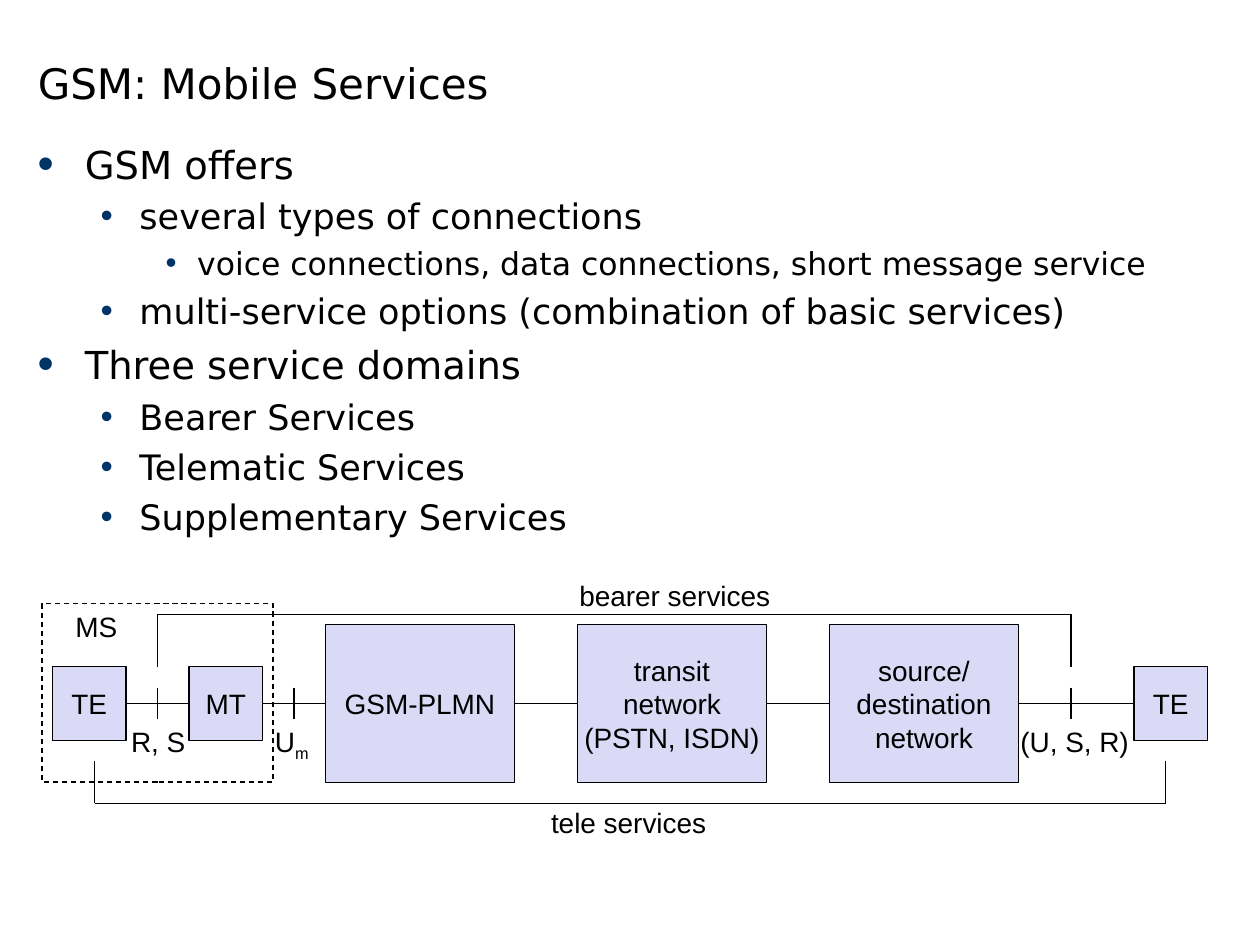
"""Build the slide on GSM mobile services."""
import dataclasses
import typing

import lxml.etree
import pptx
import pptx.dml.color
import pptx.enum.dml
import pptx.enum.shapes
import pptx.enum.text
import pptx.oxml.ns
import pptx.util

Align = pptx.enum.text.PP_ALIGN
Anchor = pptx.enum.text.MSO_ANCHOR
Fit = pptx.enum.text.MSO_AUTO_SIZE
Link = pptx.enum.shapes.MSO_CONNECTOR.STRAIGHT
Rect = pptx.enum.shapes.MSO_SHAPE.RECTANGLE
qn = pptx.oxml.ns.qn
Point = tuple[int, int]


@dataclasses.dataclass(frozen=True)
class Theme:
    ink: str = "000000"
    fill: str = "DADAF6"
    mark: str = "003366"
    head: str = "DejaVu Sans"
    label: str = "Arial"
    title: int = 24
    small: int = 16
    line: float = 0.75
    gap: float = 0.23


@dataclasses.dataclass(frozen=True)
class Level:
    size: int
    left: int
    hang: int
    mark: int


@dataclasses.dataclass(frozen=True)
class Node:
    text: str
    x: int
    y: int
    w: int
    h: int


@dataclasses.dataclass(frozen=True)
class Label:
    text: str
    x: int
    y: int
    w: int
    sub: str = ""


@dataclasses.dataclass(frozen=True)
class Bracket:
    left: int
    right: int
    bar: int
    tip: int


THEME = Theme()
SCALE = 7620
MID = 670
LEVELS = (Level(22, 45, 45, 120), Level(20, 97, 37, 100), Level(18, 152, 30, 100))
POINTS = (
    (0, "GSM offers"),
    (1, "several types of connections"),
    (2, "voice connections, data connections, short message service"),
    (1, "multi-service options (combination of basic services)"),
    (0, "Three service domains"),
    (1, "Bearer Services"),
    (1, "Telematic Services"),
    (1, "Supplementary Services"),
)
NODES = (
    Node("TE", 50, 635, 70, 70),
    Node("MT", 180, 635, 70, 70),
    Node("GSM-PLMN", 310, 595, 180, 150),
    Node("transit\nnetwork\n(PSTN, ISDN)", 550, 595, 180, 150),
    Node("source/\ndestination\nnetwork", 790, 595, 180, 150),
    Node("TE", 1080, 635, 70, 70),
)
LABELS = (
    Label("bearer services", 540, 545, 206),
    Label("tele services", 513, 761, 173),
    Label("R, S", 113, 684, 76),
    Label("(U, S, R)", 960, 684, 128),
    Label("U", 250, 684, 59, "m"),
    Label("MS", 60, 575, 64),
)
BRACKETS = (Bracket(90, 1110, 765, 725), Bracket(150, 1020, 585, 635))
TICKS = (150, 280, 1020)


def px(*vals: int) -> list[int]:
    """Turn px into EMU."""
    return [val * SCALE for val in vals]


def rgb(code: str) -> pptx.dml.color.RGBColor:
    """Read a hex colour."""
    return pptx.dml.color.RGBColor.from_string(code)


def write(para: typing.Any, text: str, *, size: float = THEME.small,
          font: str = THEME.label, align: Align = Align.LEFT, base: int = 0) -> None:
    """Add a formatted run to a paragraph."""
    para.alignment = align
    run = para.add_run()
    run.text = text
    run.font.size = pptx.util.Pt(size)
    run.font.name = font
    run.font.color.rgb = rgb(THEME.ink)
    if base:
        run.font._element.set("baseline", str(base * 1000))


def bullet(para: typing.Any, level: Level) -> None:
    """Give a paragraph its indent and bullet."""
    props = para._p.get_or_add_pPr()
    props.set("marL", str(level.left * SCALE))
    props.set("indent", str(-level.hang * SCALE))
    tint = lxml.etree.SubElement(props, qn("a:buClr"))
    lxml.etree.SubElement(tint, qn("a:srgbClr"), val=THEME.mark)
    lxml.etree.SubElement(props, qn("a:buSzPct"), val=str(level.mark * 1000))
    lxml.etree.SubElement(props, qn("a:buFont"), typeface=THEME.label)
    lxml.etree.SubElement(props, qn("a:buChar"), char="•")


def stroke(line: typing.Any) -> None:
    """Set the colour and width of a line."""
    line.color.rgb = rgb(THEME.ink)
    line.width = pptx.util.Pt(THEME.line)


def rule(shapes: typing.Any, start: Point, end: Point) -> typing.Any:
    """Draw a straight line."""
    wire = shapes.add_connector(Link, *px(*start, *end))
    stroke(wire.line)
    lxml.etree.SubElement(wire._element.spPr, qn("a:effectLst"))
    return wire


def box(shapes: typing.Any, node: Node, dashed: bool = False) -> typing.Any:
    """Draw a filled box with centred text, or a dashed frame."""
    shape = shapes.add_shape(Rect, *px(node.x, node.y, node.w, node.h))
    shape.shadow.inherit = False
    stroke(shape.line)
    if dashed:
        shape.fill.background()
        shape.line.dash_style = pptx.enum.dml.MSO_LINE.DASH
        return shape
    shape.fill.solid()
    shape.fill.fore_color.rgb = rgb(THEME.fill)
    frame = shape.text_frame
    frame.word_wrap = False
    frame.vertical_anchor = Anchor.MIDDLE
    for row, text in enumerate(node.text.split("\n")):
        para = frame.add_paragraph() if row else frame.paragraphs[0]
        write(para, text, align=Align.CENTER)
    return shape


def tag(shapes: typing.Any, label: Label) -> None:
    """Place a label with an optional subscript."""
    frame = shapes.add_textbox(*px(label.x, label.y, label.w, 44)).text_frame
    frame.word_wrap = False
    frame.auto_size = Fit.SHAPE_TO_FIT_TEXT
    write(frame.paragraphs[0], label.text)
    if label.sub:
        write(frame.paragraphs[0], label.sub, base=-25)


def brace(shapes: typing.Any, item: Bracket) -> None:
    """Draw a bracket as a group of three lines."""
    group = shapes.add_group_shape().shapes
    rule(group, (item.left, item.bar), (item.right, item.bar))
    for x in (item.left, item.right):
        rule(group, (x, item.bar), (x, item.tip))


def main() -> None:
    """Build and save the slide."""
    deck = pptx.Presentation()
    deck.slide_width, deck.slide_height = px(1200, 900)
    shapes = deck.slides.add_slide(deck.slide_layouts[5]).shapes

    title = shapes.title
    title.left, title.top, title.width, title.height = px(24, 0, 793, 109)
    title.text_frame.vertical_anchor = Anchor.BOTTOM
    title.text_frame.auto_size = Fit.NONE
    write(title.text_frame.paragraphs[0], "GSM: Mobile Services",
          size=THEME.title, font=THEME.head)

    body = shapes.add_textbox(*px(24, 128, 1153, 388)).text_frame
    body.word_wrap = True
    for row, (depth, text) in enumerate(POINTS):
        para = body.add_paragraph() if row else body.paragraphs[0]
        level = LEVELS[depth]
        para.level = depth
        bullet(para, level)
        if row:
            para.space_before = pptx.util.Pt(level.size * THEME.gap)
        write(para, text, size=level.size, font=THEME.head)

    boxes = [box(shapes, node) for node in NODES]
    for left, right in zip(boxes, boxes[1:]):
        wire = rule(shapes, (0, MID), (0, MID))
        wire.begin_connect(left, 3)
        wire.end_connect(right, 1)
    for item in BRACKETS:
        brace(shapes, item)
    for x in TICKS:
        rule(shapes, (x, MID - 15), (x, MID + 15))
    box(shapes, Node("", 40, 575, 220, 170), dashed=True)
    for label in LABELS:
        tag(shapes, label)
    deck.save("out.pptx")


if __name__ == "__main__":
    main()
